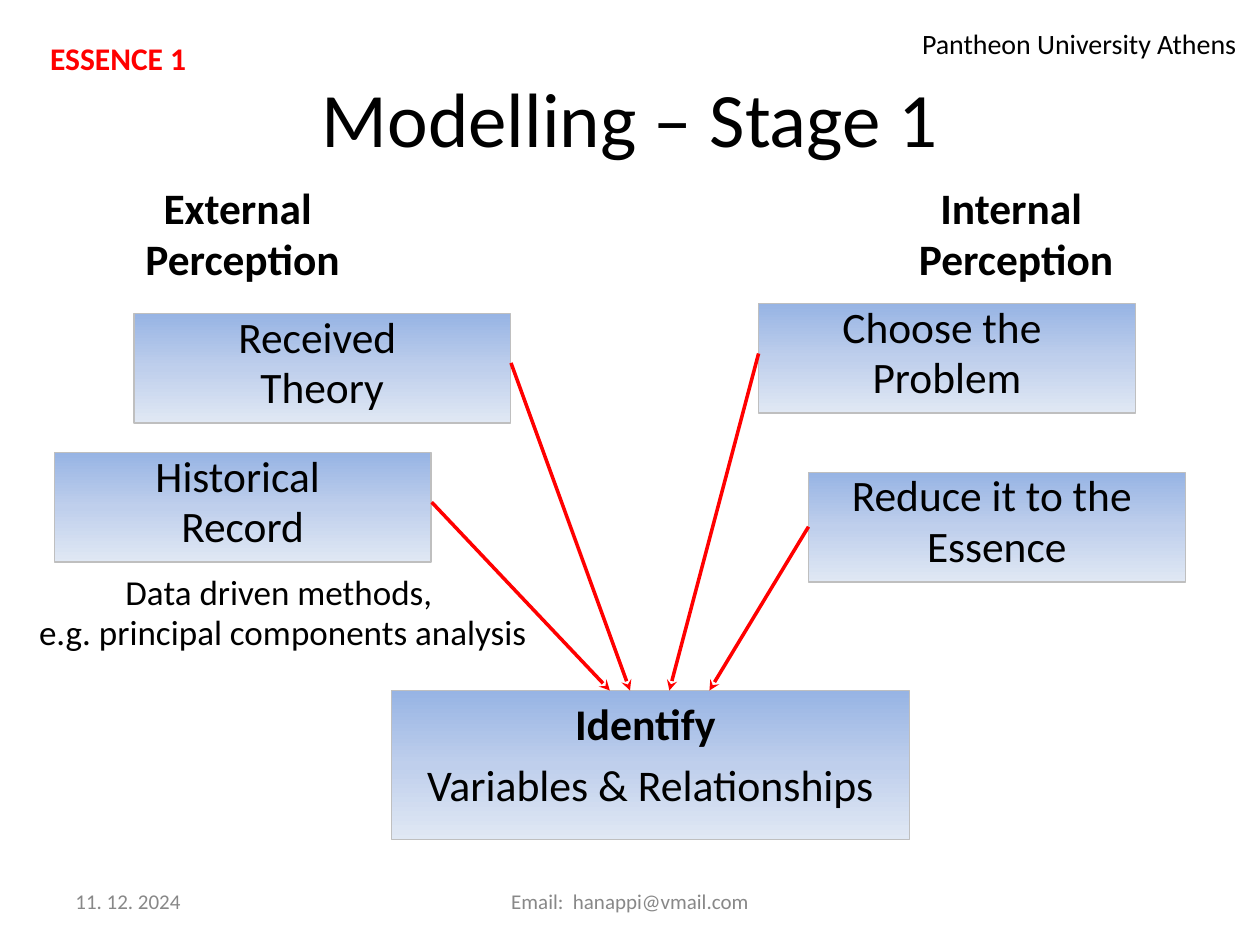
from copy import deepcopy
from dataclasses import dataclass

from pptx import Presentation
from pptx.dml.color import RGBColor
from pptx.enum.shapes import MSO_CONNECTOR, MSO_SHAPE
from pptx.enum.text import MSO_ANCHOR as Anchor, PP_ALIGN as Align
from pptx.oxml.ns import qn
from pptx.slide import Slide
from pptx.text.text import TextFrame
from pptx.util import Pt


@dataclass(frozen=True)
class Theme:
    font: str = "Calibri"
    ink: str = "000000"
    accent: str = "FF0000"
    muted: str = "888888"
    border: str = "BFBFBF"
    gradient: tuple[str, ...] = ("97B4E4", "BFCFEC", "E0E8F4")
    title: float = 44
    result: float = 25
    step: float = 24.8
    note: float = 20
    tag: float = 18
    venue: float = 16
    footer: float = 12
    hanging: float = 27


THEME = Theme()


@dataclass(frozen=True)
class Line:
    text: str
    bold: bool = False


@dataclass(frozen=True)
class Block:
    """Text at a place in points, optionally on a gradient panel."""
    left: float
    top: float
    width: float
    height: float
    lines: tuple[Line, ...]
    size: float
    color: str = THEME.ink
    align: Align = Align.CENTER
    anchor: Anchor = Anchor.TOP
    inset: float = 3.6
    spacing: float | None = None
    gap: float = 0
    hanging: bool = False
    panel: bool = False
    wrap: bool = True


@dataclass(frozen=True)
class Arrow:
    start: tuple[float, float]
    end_x: float


STEP_WIDTH, STEP_HEIGHT = 215.3, 62.6
RESULT_TOP = 394.6


def step(left: float, top: float, first: str, second: str, heading: bool = False) -> Block:
    return Block(left, top, STEP_WIDTH, STEP_HEIGHT, (Line(first, heading), Line(second, heading)),
                 THEME.step, spacing=0.8, gap=5, hanging=True, panel=not heading)


def caption(left: float, top: float, width: float, height: float, text: str, size: float,
            color: str = THEME.ink, bold: bool = False) -> Block:
    return Block(left, top, width, height, (Line(text, bold),), size, color,
                 align=Align.LEFT, inset=7.2, wrap=False)


def footer(left: float, width: float, text: str, align: Align) -> Block:
    return Block(left, 500.4, width, 28.8, (Line(text),), THEME.footer, THEME.muted,
                 align=align, anchor=Anchor.MIDDLE)


BLOCKS = (
    Block(36, 21.6, 648, 90, (Line("Modelling – Stage 1"),), THEME.title, anchor=Anchor.MIDDLE),
    Block(223.6, RESULT_TOP, 296, 85, (Line("Identify ", True), Line("Variables & Relationships")),
          THEME.result, gap=5, hanging=True, panel=True),
    # Perception columns
    step(31, 105.8, "External ", "Perception", heading=True),
    step(473, 105.8, "Internal ", "Perception", heading=True),
    step(76.5, 179.2, "Received ", "Theory"),
    step(31, 258.6, "Historical ", "Record"),
    Block(14.4, 326.9, 294.5, 67.7,
          (Line("Data driven methods, "), Line("e.g. principal components analysis")),
          THEME.note, spacing=0.8, gap=4, hanging=True),
    step(462, 270, "Reduce it to the ", "Essence"),
    step(433.5, 173.5, "Choose the ", "Problem"),
    # Footer and corners
    footer(36, 168, "11. 12. 2024", Align.LEFT),
    footer(246, 228, "Email:  hanappi@vmail.com", Align.CENTER),
    caption(519.8, 7.9, 195.8, 28.8, "Pantheon University Athens", THEME.venue),
    caption(21.6, 15.1, 102.2, 35.3, "ESSENCE 1", THEME.tag, THEME.accent, True),
)

ARROWS = (
    Arrow((246.7, 287), 348.5),
    Arrow((292, 207.4), 360),
    Arrow((462, 301), 405.4),
    Arrow((433.5, 202), 382.5),
)


def paint_panel(shape) -> None:
    shape.shadow.inherit = False
    shape.line.color.rgb = RGBColor.from_string(THEME.border)
    shape.line.width = Pt(0.75)
    shape.fill.gradient()
    shape.fill.gradient_angle = 270  # counter-clockwise: top to bottom
    stop_list = shape._element.spPr.find(qn("a:gradFill")).find(qn("a:gsLst"))
    stop_list.insert(1, deepcopy(stop_list[0]))
    last = len(THEME.gradient) - 1
    for index, (stop, color) in enumerate(zip(shape.fill.gradient_stops, THEME.gradient)):
        stop.position = index / last
        stop.color.rgb = RGBColor.from_string(color)


def write_lines(frame: TextFrame, block: Block) -> None:
    frame.word_wrap = block.wrap
    frame.vertical_anchor = block.anchor
    frame.margin_left = frame.margin_right = Pt(7.2)
    frame.margin_top = frame.margin_bottom = Pt(block.inset)
    for index, line in enumerate(block.lines):
        paragraph = frame.add_paragraph() if index else frame.paragraphs[0]
        paragraph.alignment = block.align
        paragraph.line_spacing = block.spacing
        paragraph.space_before = Pt(block.gap if index else 0)
        if block.hanging:
            properties = paragraph._p.get_or_add_pPr()
            properties.set("marL", str(Pt(THEME.hanging)))
            properties.set("indent", str(-Pt(THEME.hanging)))
        run = paragraph.add_run()
        run.text = line.text
        run.font.name = THEME.font
        run.font.size = Pt(block.size)
        run.font.bold = line.bold
        run.font.color.rgb = RGBColor.from_string(block.color)


def draw_block(slide: Slide, block: Block) -> None:
    place = [Pt(length) for length in (block.left, block.top, block.width, block.height)]
    if block.panel:
        shape = slide.shapes.add_shape(MSO_SHAPE.RECTANGLE, *place)
        paint_panel(shape)
    else:
        shape = slide.shapes.add_textbox(*place)
    write_lines(shape.text_frame, block)


def draw_arrow(slide: Slide, arrow: Arrow) -> None:
    ends = [Pt(length) for length in (*arrow.start, arrow.end_x, RESULT_TOP)]
    connector = slide.shapes.add_connector(MSO_CONNECTOR.STRAIGHT, *ends)
    connector.line.color.rgb = RGBColor.from_string(THEME.accent)
    connector.line.width = Pt(2)
    outline = connector.line._get_or_add_ln()
    outline.append(outline.makeelement(qn("a:tailEnd"), {"type": "stealth"}))
    properties = connector._element.spPr
    properties.append(properties.makeelement(qn("a:effectLst"), {}))


def main() -> None:
    deck = Presentation()
    deck.slide_width, deck.slide_height = Pt(720), Pt(540)
    slide = deck.slides.add_slide(deck.slide_layouts[6])
    for block in BLOCKS:
        draw_block(slide, block)
    for arrow in ARROWS:
        draw_arrow(slide, arrow)
    deck.save("out.pptx")


if __name__ == "__main__":
    main()
